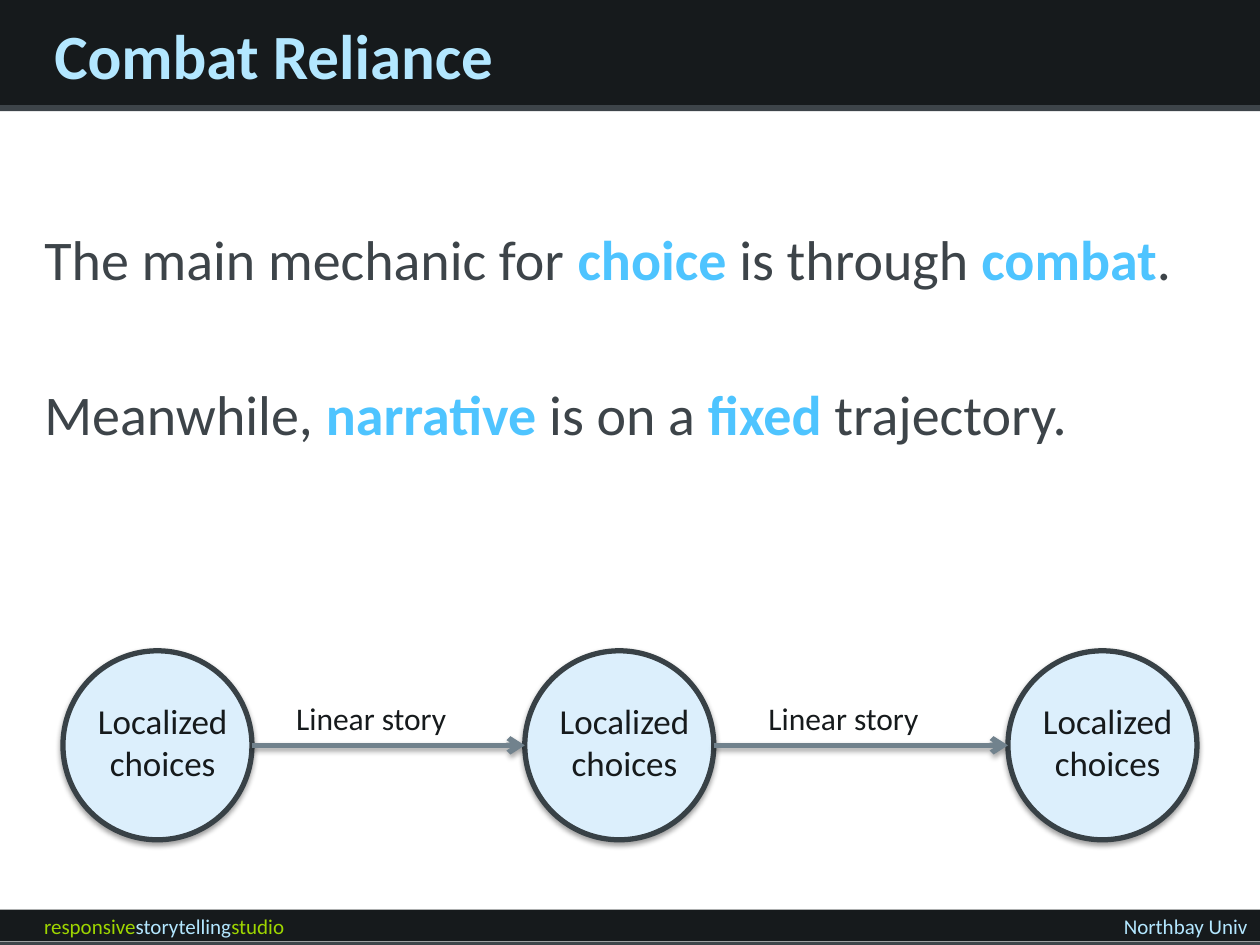
from dataclasses import dataclass

from lxml import etree
from pptx import Presentation
from pptx import util as u
from pptx.dml.color import RGBColor
from pptx.enum import shapes, text
from pptx.oxml import ns

COLORS = {
    "dark": "161A1C",
    "slate": "3D4449",
    "lime": "9ED600",
    "ice": "B3E7FF",
    "sky": "4EC4FF",
    "bubble": "DCEFFC",
    "outline": "384146",
    "arrow": "71828D",
}
FONT = "Calibri"


@dataclass
class Box:
    left: float
    top: float
    width: float
    height: float

    def lengths(self) -> tuple:
        return u.Cm(self.left), u.Cm(self.top), u.Cm(self.width), u.Cm(self.height)


@dataclass
class Span:
    words: str
    color: str
    bold: bool = False


def write(paragraph, spans: list[Span], size: float, align=text.PP_ALIGN.LEFT) -> None:
    paragraph.alignment = align
    for span in spans:
        run = paragraph.add_run()
        run.text = span.words
        run.font.name = FONT
        run.font.size = u.Pt(size)
        run.font.bold = span.bold
        run.font.color.rgb = RGBColor.from_string(COLORS[span.color])


def place(placeholder, box: Box) -> None:
    placeholder.left, placeholder.top, placeholder.width, placeholder.height = box.lengths()
    placeholder.text_frame.auto_size = text.MSO_AUTO_SIZE.NONE


def add_label(slide, box: Box, spans: list[Span], size: float,
              align=text.PP_ALIGN.LEFT, wrap: bool = True) -> None:
    label = slide.shapes.add_textbox(*box.lengths())
    label.text_frame.word_wrap = wrap
    write(label.text_frame.paragraphs[0], spans, size, align)


def add_bar(slide, box: Box, color: str) -> None:
    bar = slide.shapes.add_shape(shapes.MSO_SHAPE.RECTANGLE, *box.lengths())
    bar.shadow.inherit = False
    bar.fill.solid()
    bar.fill.fore_color.rgb = RGBColor.from_string(COLORS[color])
    bar.line.fill.background()
    slide.shapes.title.element.addprevious(bar.element)


def add_shadow(effects, distance: float, opacity: int) -> None:
    shadow = etree.SubElement(
        effects, ns.qn("a:outerShdw"), blurRad=str(u.Pt(3.1)),
        dist=str(u.Pt(distance)), dir="5400000", rotWithShape="0")
    tint = etree.SubElement(shadow, ns.qn("a:srgbClr"), val="000000")
    etree.SubElement(tint, ns.qn("a:alpha"), val=str(opacity * 1000))


def add_bubble(slide, box: Box):
    bubble = slide.shapes.add_shape(shapes.MSO_SHAPE.OVAL, *box.lengths())
    bubble.fill.solid()
    bubble.fill.fore_color.rgb = RGBColor.from_string(COLORS["bubble"])
    bubble.line.color.rgb = RGBColor.from_string(COLORS["outline"])
    bubble.line.width = u.Pt(3)
    bubble.shadow.inherit = False
    add_shadow(bubble.element.spPr.find(ns.qn("a:effectLst")), 1.6, 38)
    return bubble


def add_arrow(slide, source, target) -> None:
    middle = source.top + source.height // 2
    arrow = slide.shapes.add_connector(
        shapes.MSO_CONNECTOR.STRAIGHT, source.left + source.width, middle,
        target.left, middle)
    arrow.line.color.rgb = RGBColor.from_string(COLORS["arrow"])
    arrow.line.width = u.Pt(3)
    properties = arrow.element.spPr
    etree.SubElement(properties.find(ns.qn("a:ln")), ns.qn("a:tailEnd"), type="arrow")
    add_shadow(etree.SubElement(properties, ns.qn("a:effectLst")), 1.8, 35)


def add_statements(body) -> None:
    place(body, Box(0.64, 2.74, 23.93, 14.05))
    frame = body.text_frame
    frame.margin_top = u.Cm(1.78)
    statements = [
        [Span("The main mechanic for ", "slate"), Span("choice", "sky", True),
         Span(" is through ", "slate"), Span("combat", "sky", True), Span(".", "slate")],
        [Span("Meanwhile, ", "slate"), Span("narrative", "sky", True),
         Span(" is on a ", "slate"), Span("fixed", "sky", True),
         Span(" trajectory.", "slate")],
    ]
    for index, spans in enumerate(statements):
        statement = frame.add_paragraph() if index else frame.paragraphs[0]
        statement.space_before = u.Pt(50.6 if index else 0)
        write(statement, spans, 32)
        properties = statement._p.get_or_add_pPr()
        properties.set("marL", str(u.Cm(0.95)))
        properties.set("indent", str(u.Cm(-0.95)))
        etree.SubElement(properties, ns.qn("a:buNone"))


def add_story_line(slide) -> None:
    bubble_lefts = [1.27, 10.58, 20.32]
    bubbles = [add_bubble(slide, Box(left, 13.12, 3.81, 3.81)) for left in bubble_lefts]
    for source, target in zip(bubbles, bubbles[1:]):
        add_arrow(slide, source, target)
    for left in bubble_lefts:
        add_label(slide, Box(left, 13.97, 4.02, 1.96),
                  [Span("Localized choices", "dark")], 20, text.PP_ALIGN.CENTER)
    for left in (5.72, 15.24):
        add_label(slide, Box(left, 13.97, 3.58, 1.03),
                  [Span("Linear story", "dark")], 18, wrap=False)


def main() -> None:
    deck = Presentation()
    deck.slide_width, deck.slide_height = u.Cm(25.4), u.Cm(19.05)
    slide = deck.slides.add_slide(deck.slide_layouts[1])
    title, body = slide.placeholders

    add_bar(slide, Box(0, 0, 25.4, 2.12), "dark")
    add_bar(slide, Box(0, 18.34, 25.4, 0.64), "dark")
    add_bar(slide, Box(0, 2.12, 25.4, 0.12), "slate")
    add_bar(slide, Box(0, 18.99, 25.4, 0.06), "slate")

    place(title, Box(0.84, 0, 22.86, 2.2))
    title.text_frame.vertical_anchor = text.MSO_ANCHOR.MIDDLE
    write(title.text_frame.paragraphs[0], [Span("Combat Reliance", "ice", True)], 36)

    add_statements(body)
    add_story_line(slide)

    add_label(slide, Box(0.64, 18.29, 9.95, 0.76),
              [Span("responsive", "lime"), Span("storytelling", "ice"),
               Span("studio", "lime")], 12)
    add_label(slide, Box(16.93, 18.29, 8.47, 0.76),
              [Span("Northbay Univ", "ice")], 12, text.PP_ALIGN.RIGHT)

    deck.save("out.pptx")


if __name__ == "__main__":
    main()
